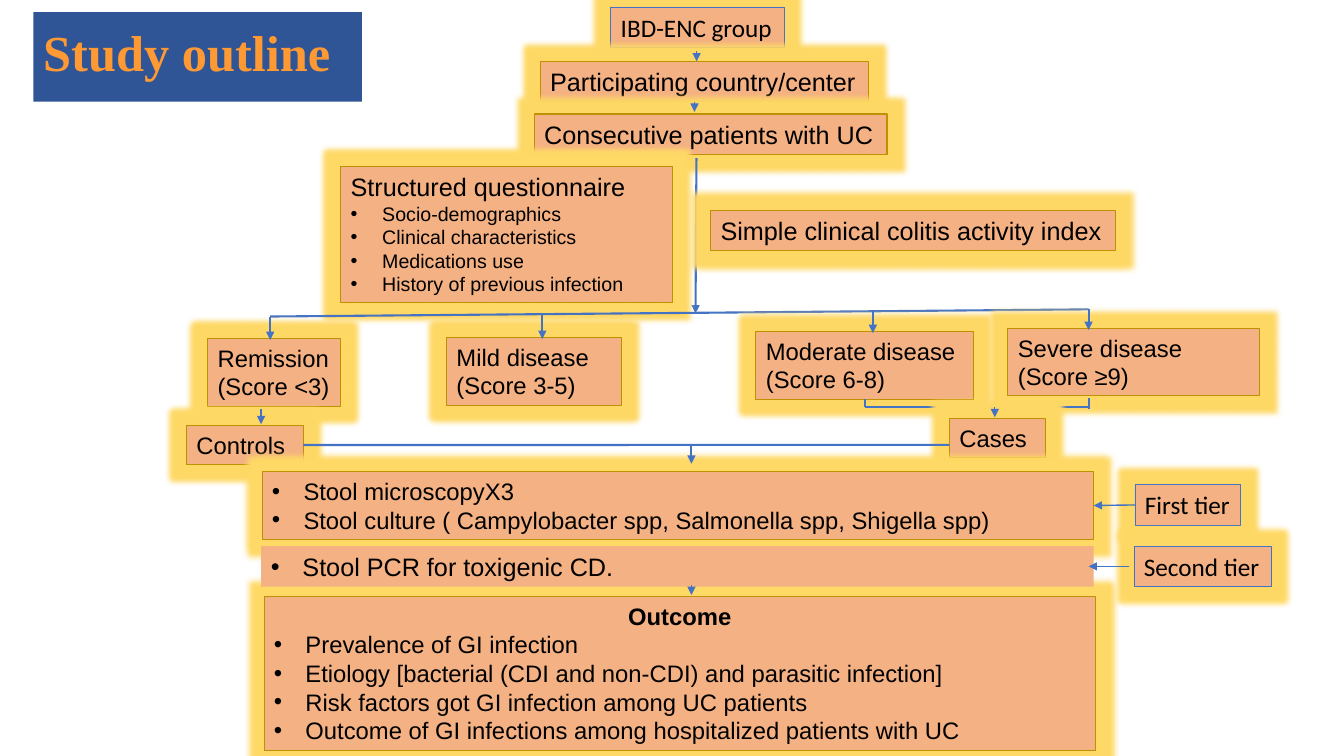
from lxml.etree import SubElement
from pptx import Presentation
from pptx.dml.color import RGBColor
from pptx.enum.shapes import MSO_CONNECTOR, MSO_SHAPE
from pptx.enum.text import MSO_ANCHOR, PP_ALIGN
from pptx.oxml.ns import qn
from pptx.util import Pt

PEACH, GOLD, BLUE, GLOW = "F4B183", "BF9000", "4472C4", "FFD966"
ROW, PAIR = 28.8, 48.2


def hue(code):
    return RGBColor.from_string(code)


def glow(shape):
    effects = SubElement(shape._element.spPr, qn("a:effectLst"))
    halo = SubElement(effects, qn("a:glow"), rad=str(Pt(8)))
    SubElement(halo, qn("a:srgbClr"), val=GLOW)


def block(slide, box, fill, edge=None, width=0.75):
    shape = slide.shapes.add_shape(MSO_SHAPE.RECTANGLE, *map(Pt, box))
    shape.fill.solid()
    shape.fill.fore_color.rgb = hue(fill)
    if edge:
        shape.line.color.rgb = hue(edge)
        shape.line.width = Pt(width)
        glow(shape)
    else:
        shape.line.fill.background()
        shape.shadow.inherit = False
    return shape


def write(frame, index, text, size, font="Arial", color="000000", bold=False,
          align=PP_ALIGN.LEFT, bullet=False):
    para = frame.add_paragraph() if index else frame.paragraphs[0]
    para.alignment = align
    run = para.add_run()
    run.text = text
    for key, value in {"size": Pt(size), "name": font, "bold": bold}.items():
        setattr(run.font, key, value)
    run.font.color.rgb = hue(color)
    if bullet:
        props = para._p.get_or_add_pPr()
        props.set("marL", str(Pt(22.5)))
        props.set("indent", str(Pt(-22.5)))
        SubElement(props, qn("a:buFont"), typeface="Arial")
        SubElement(props, qn("a:buChar"), char="•")


def card(slide, box, heads=(), points=(), size=18, small=None, edge=GOLD,
         width=0.75, wrap=False, **style):
    shape = block(slide, box, PEACH, edge, width)
    frame = shape.text_frame
    frame.word_wrap = wrap
    frame.vertical_anchor = MSO_ANCHOR.TOP
    for index, text in enumerate(heads):
        write(frame, index, text, size, **style)
    for index, text in enumerate(points, len(heads)):
        write(frame, index, text, small or size, bullet=True)
    return shape


def link(slide, start, end, width=1.5, arrow=True):
    line = slide.shapes.add_connector(
        MSO_CONNECTOR.STRAIGHT, *map(Pt, (*start, *end)))
    line.line.color.rgb = hue(BLUE)
    line.line.width = Pt(width)
    if arrow:
        SubElement(line.line._get_or_add_ln(), qn("a:tailEnd"), type="triangle")
    SubElement(line._element.spPr, qn("a:effectLst"))
    return line


def title(slide, box):
    frame = block(slide, box, "2F5597").text_frame
    frame.vertical_anchor = MSO_ANCHOR.TOP
    frame.margin_top = Pt(6.6)
    write(frame, 0, "Study outline", 36, "Times New Roman", "FF9933", True)


def intake(slide, box):
    x, y, w, h = box
    card(slide, (x + 54.7, y, 123.8, ROW), ["IBD-ENC group"],
         edge=BLUE, width=0.5, font="Calibri")
    card(slide, (x + 4.3, y + 38.9, 234.7, ROW), ["Participating country/center"])
    card(slide, (x, y + 76.4, w, ROW), ["Consecutive patients with UC"], width=1)
    link(slide, (x + 116, y + 31.7), (x + 116, y + 38.9), 0.5)
    link(slide, (x + 114.5, y + 67.7), (x + 114.5, y + 74.9), 0.5)


def survey(slide, box):
    x, y, w, h = box
    link(slide, (x + 254.1, y - 5.8), (x + 253.4, y + 105.1))
    card(slide, (x + 264.2, y + 31.7, 289.4, ROW),
         ["Simple clinical colitis activity index"])
    card(slide, (x, y, 236.9, h), ["Structured questionnaire"],
         ["Socio-demographics", "Clinical characteristics", "Medications use",
          "History of previous infection"], small=14, wrap=True)


def grades(slide, box):
    x, y, w, h = box
    left, right = (x + 44.7, y + 5.1), (x + 629.3, y)
    link(slide, left, right, arrow=False)
    for name, score, dx, dy, width, drop in (
            ("Remission", "<3", 0, 20.9, 95, 44.7),
            ("Mild disease", "3-5", 170.7, 20.2, 125.3, 239.1),
            ("Moderate disease", "6-8", 391.7, 15.9, 155.5, 475.2),
            ("Severe disease", "≥9", 571.7, 13.7, 180, 629.3)):
        card(slide, (x + dx, y + dy, width, PAIR), [name, f"(Score {score})"],
             size=17, wrap=dx > 0)
        top = y + 5.1 * (629.3 - drop) / 584.6
        link(slide, (x + drop, top), (x + drop, y + dy + 1))


def arms(slide, box):
    x, y, w, h = box
    control = card(slide, (x, y + 19.4, 83.5, 28.1), ["Controls"], size=17)
    link(slide, (x + 53.3, y + 7.9), (x + 53.3, y + 18.7))
    bar, left, right = y + 6.5, x + 484.6, x + 644.4
    link(slide, (left, bar), (right, bar), arrow=False)
    link(slide, (left, y + 0.7), (left, bar), arrow=False)
    link(slide, (right, y), (right, y + 7.9), arrow=False)
    card(slide, (x + 545, y + 14.4, 68.4, 28.1), ["Cases"], size=17)
    link(slide, (x + 577.4, bar), (x + 577.4, y + 13.7), 0.5)
    join = link(slide, (x + 83.5, y + 33.4), (x + 545, y + 33.4), arrow=False)
    join.begin_connect(control, 3)


def tests(slide, box):
    x, y, w, h = box
    stool = card(slide, (x + 0.7, y, 594, PAIR), points=[
        "Stool microscopyX3",
        "Stool culture ( Campylobacter spp, Salmonella spp, Shigella spp)"],
        size=17, wrap=True)
    link(slide, (x + 307.4, y - 19.5), (x + 307.4, y - 5.8))
    outcome(slide, (x + 2.1, y + 89.2, 594, 110.2))
    card(slide, (x, y + 53.2, 594.7, ROW), points=["Stool PCR for toxigenic CD."],
         edge=None, wrap=True)
    link(slide, (x + 307.4, y + 81), (x + 307.4, y + 88), 0.5)
    look = {"edge": BLUE, "width": 0.5, "font": "Calibri"}
    first = card(slide, (x + 624.2, y + 9.3, 75.6, ROW), ["First tier"], **look)
    card(slide, (x + 623.5, y + 53.2, 97.9, ROW), ["Second tier"], **look)
    line = link(slide, (x + 624.2, y + 24), (x + 594.7, y + 24), 1)
    line.begin_connect(first, 1)
    line.end_connect(stool, 3)
    link(slide, (x + 619.9, y + 67.6), (x + 591.1, y + 67.6), 1)


def outcome(slide, box):
    card(slide, box, ["Outcome"], [
        "Prevalence of GI infection",
        "Etiology [bacterial (CDI and non-CDI) and parasitic infection]",
        "Risk factors got GI infection among UC patients",
        "Outcome of GI infections among hospitalized patients with UC"],
        size=17, wrap=True, bold=True, align=PP_ALIGN.CENTER)


def main():
    deck = Presentation()
    deck.slide_width, deck.slide_height = Pt(960), Pt(540)
    slide = deck.slides.add_slide(deck.slide_layouts[6])
    intake(slide, (381.6, 5, 252, 105.2))
    survey(slide, (243.4, 118.8, 553.6, 97.2))
    grades(slide, (148.3, 221, 751.7, 69.1))
    arms(slide, (133.2, 284.4, 644.4, 47.5))
    tests(slide, (186.5, 337, 721.4, 199.4))
    title(slide, (23.8, 8.6, 234.7, 64.1))
    deck.save("out.pptx")


if __name__ == "__main__":
    main()
